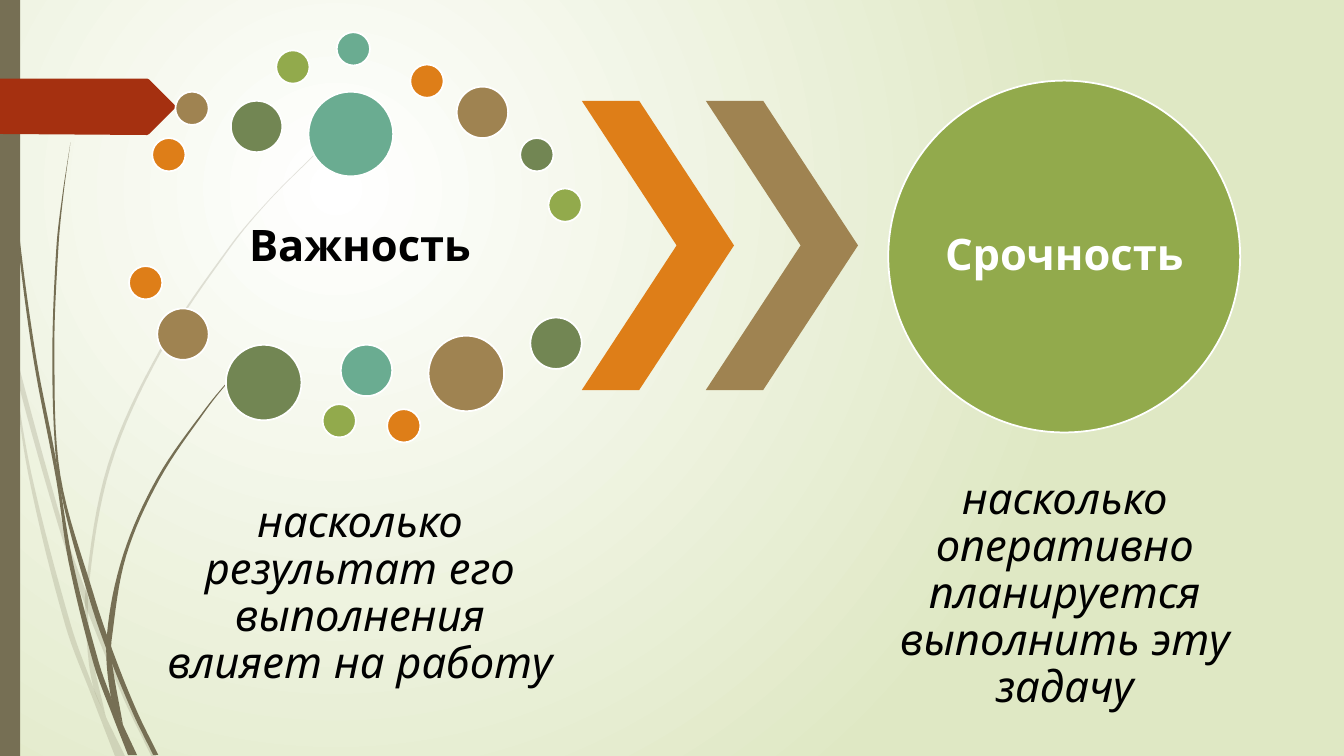
from itertools import cycle
from lxml.etree import SubElement as Sub
from pptx import Presentation
from pptx.dml.color import RGBColor as Rgb
from pptx.enum.shapes import MSO_SHAPE as Kind
from pptx.enum.text import MSO_ANCHOR as Anchor, PP_ALIGN as Align
from pptx.oxml.ns import qn
from pptx.util import Inches, Pt

COLS, ROWS = 13.33, 7.5
HUES = {
    "orange": "DE7E18", "tan": "9F8351", "moss": "728653", "lime": "92AA4C",
    "teal": "6AAC91", "stem": "766F54", "tag": "A53010", "pale": "DFE8C4",
    "white": "FFFFFF", "black": "000000",
}
RING = ["orange", "tan", "moss", "lime", "teal"]
FONT = {"name": "Quicksand", "size": Pt(31)}
PARA = {"alignment": Align.CENTER, "line_spacing": 0.9}
SIZES = {"s": 0.33, "m": 0.51, "l": 0.75, "xl": 0.84}
DOTS = [
    ("s", 0.23, 1.05), ("s", 0.46, 0.59), ("m", 1.01, 0.68),
    ("s", 1.46, 0.18), ("s", 2.06, 0), ("s", 2.79, 0.32),
    ("m", 3.25, 0.54), ("s", 3.88, 1.05), ("s", 4.16, 1.55),
    ("xl", 1.78, 0.59), ("s", 0, 2.32), ("m", 0.28, 2.74),
    ("l", 0.96, 3.1), ("s", 1.92, 3.69), ("m", 2.1, 3.1),
    ("s", 2.56, 3.74), ("l", 2.97, 3.01), ("m", 3.98, 2.83),
]
FAINT = [
    ([(0, 2.82), (0.14, 3.45), (0.62, 5.2), (0.85, 5.86), (1.27, 6.92), (1.55, 7.5)],
     [(1.5, 7.5), (1.23, 6.94), (0.84, 5.99), (0.58, 5.22), (0.17, 3.76), (0, 2.99)]),
    ([(0.11, 3.5), (0.28, 4.7), (0.65, 6.21), (0.92, 6.93), (1.14, 7.5)],
     [(1.24, 7.5), (1.05, 7.11), (0.93, 6.83), (0.7, 6.19), (0.31, 4.69), (0.11, 3.5)]),
    ([(3.12, 1.53), (2.68, 1.97), (2.28, 2.44), (1.58, 3.48), (1.07, 4.61),
      (0.85, 5.84), (0.87, 6.46), (0.93, 6.83), (1.05, 7.11)],
     [(1.05, 7.11), (0.91, 6.46), (0.88, 5.84), (1.1, 4.62), (1.6, 3.49),
      (2.29, 2.45), (2.68, 1.98), (3.12, 1.54)]),
]
DARK = [
    ([(0.03, 0), (0.07, 1.1), (0.17, 2.33), (0.33, 3.55), (0.56, 4.77),
      (0.68, 5.57), (0.93, 6.59), (1.11, 7.08), (1.27, 7.49)],
     [(1.36, 7.49), (1.22, 7.19), (1.1, 6.91), (0.98, 6.57), (0.72, 5.56),
      (0.55, 4.53), (0.36, 3.55), (0.19, 2.32), (0.08, 1.09), (0.04, 0)]),
    ([(0.7, 1.41), (0.62, 1.93), (0.56, 2.45), (0.52, 3.49), (0.55, 4.49),
      (0.64, 5.05), (0.88, 5.92), (1.06, 6.45), (1.32, 7.08), (1.52, 7.49)],
     [(1.57, 7.49), (1.36, 7.06), (1.13, 6.49), (0.93, 5.9), (0.6, 4.72),
      (0.54, 3.49), (0.58, 2.45), (0.63, 1.93), (0.7, 1.41)]),
    ([(2.6, 3.44), (2.31, 3.73), (2.04, 4.05), (1.56, 4.74), (1.22, 5.51),
      (1.06, 6.31), (1.1, 6.91), (1.22, 7.19)],
     [(1.22, 7.19), (1.11, 6.56), (1.11, 6.33), (1.25, 5.52), (1.58, 4.76),
      (2.05, 4.06), (2.31, 3.74), (2.61, 3.44)]),
]


def apply(item, values):
    for key, value in values.items():
        setattr(item, key, value)


def paint(shape, hue, edge=None):
    shape.shadow.inherit = False
    shape.fill.solid()
    shape.fill.fore_color.rgb = Rgb.from_string(HUES[hue])
    if edge:
        shape.line.color.rgb = Rgb.from_string(HUES[edge])
        shape.line.width = Pt(1.25)
    else:
        shape.line.fill.background()


def place(slide, kind, box, hue, edge=None):
    shape = slide.shapes.add_shape(kind, *map(Inches, box))
    paint(shape, hue, edge)
    return shape


def shape_of(slide, box, points, hue):
    left, top = box[:2]
    spots = [(Inches(left + x), Inches(top + y)) for x, y in points]
    pen = slide.shapes.build_freeform(*spots[0], scale=1.0)
    pen.add_line_segments(spots[1:], close=True)
    shape = pen.convert_to_shape()
    paint(shape, hue)
    return shape


def write(slide, box, text, hue, pad=0.04, **style):
    frame = slide.shapes.add_textbox(*map(Inches, box)).text_frame
    sides = ("left", "top", "right", "bottom")
    apply(frame, {f"margin_{side}": Inches(pad) for side in sides})
    apply(frame, {"word_wrap": True, "vertical_anchor": Anchor.MIDDLE})
    para = frame.paragraphs[0]
    apply(para, PARA)
    run = para.add_run()
    run.text = text
    apply(run.font, FONT | style)
    run.font.color.rgb = Rgb.from_string(HUES[hue])


def bend(points, steps=8):
    knots = [complex(*point) for point in points]
    ends = [knots[0], *knots, knots[-1]]
    turns = [(b - a) / abs(b - a) for a, b in zip(ends, ends[2:])]
    curve = []
    for i, (a, b) in enumerate(zip(knots, knots[1:])):
        reach = abs(b - a) / 3
        c, d = a + turns[i] * reach, b - turns[i + 1] * reach
        for t in (step / steps for step in range(steps + 1)):
            u = 1 - t
            spot = u**3 * a + 3 * u * u * t * c + 3 * u * t * t * d + t**3 * b
            curve.append((spot.real, spot.imag))
    return curve


def backdrop(slide):
    fill = slide.background.fill
    fill.gradient()
    for stop, hue in zip(fill.gradient_stops, ("white", "pale")):
        stop.color.rgb = Rgb.from_string(HUES[hue])
    grad = slide.element.find(".//" + qn("a:gradFill"))
    grad.remove(grad.find(qn("a:lin")))
    round_ = Sub(grad, qn("a:path"), {"path": "circle"})
    Sub(round_, qn("a:fillToRect"), {"l": "50000", "t": "50000", "r": "100000", "b": "100000"})


def margin(slide, box):
    left, top, _, high = box
    for blades, alpha in ((FAINT, 20), (DARK, 100)):
        for out, back in blades:
            blade = shape_of(slide, box, bend(out) + bend(back), "stem")
            if alpha < 100:
                tint = blade.element.spPr.find(".//" + qn("a:srgbClr"))
                Sub(tint, qn("a:alpha"), {"val": str(alpha * 1000)})
    place(slide, Kind.RECTANGLE, (left, top, 0.2, high), "stem")
    tag = [(0, 0.78), (1.46, 0.78), (1.48, 0.79), (1.73, 1.04), (1.74, 1.06),
           (1.73, 1.08), (1.48, 1.33), (1.46, 1.34), (0, 1.33)]
    shape_of(slide, box, tag, "tag")


def weight(slide, box):
    left, top, wide, _ = box
    write(slide, (left + 0.24, top + 1.46, 4.1, 1.35), "Важность", "black", bold=True)
    for (size, x, y), hue in zip(DOTS, cycle(RING)):
        side = SIZES[size]
        place(slide, Kind.OVAL, (left + x, top + y, side, side), hue, "white")


def arrows(slide, box):
    left, top, wide, high = box
    for i, hue in enumerate(RING[:2]):
        arrow = place(slide, Kind.CHEVRON, (left + i * 1.23, top, wide - 1.23, high), hue)
        arrow.adjustments[0] = 0.623


def urgency(slide, box):
    left, top, wide, high = box
    place(slide, Kind.OVAL, box, "lime", "white")
    inner = (left + 0.51, top + 0.51, wide - 1.02, high - 1.02)
    write(slide, inner, "Срочность", "white", pad=0, bold=True)


def note(slide, box, text):
    write(slide, box, text, "black", italic=True)


def main():
    deck = Presentation()
    apply(deck, {"slide_width": Inches(COLS), "slide_height": Inches(ROWS)})
    slide = deck.slides.add_slide(deck.slide_layouts[6])
    backdrop(slide)
    margin(slide, (0, 0, 3.12, ROWS))
    weight(slide, (1.28, 0.32, 4.49, 4.07))
    arrows(slide, (5.77, 1, 2.74, 2.87))
    urgency(slide, (8.81, 0.8, 3.49, 3.49))
    note(slide, (1.52, 4.63, 4.1, 2.53), "насколько результат его выполнения влияет на работу")
    note(slide, (8.51, 4.63, 4.1, 2.53), "насколько оперативно планируется выполнить эту задачу")
    deck.save("out.pptx")


if __name__ == "__main__":
    main()
